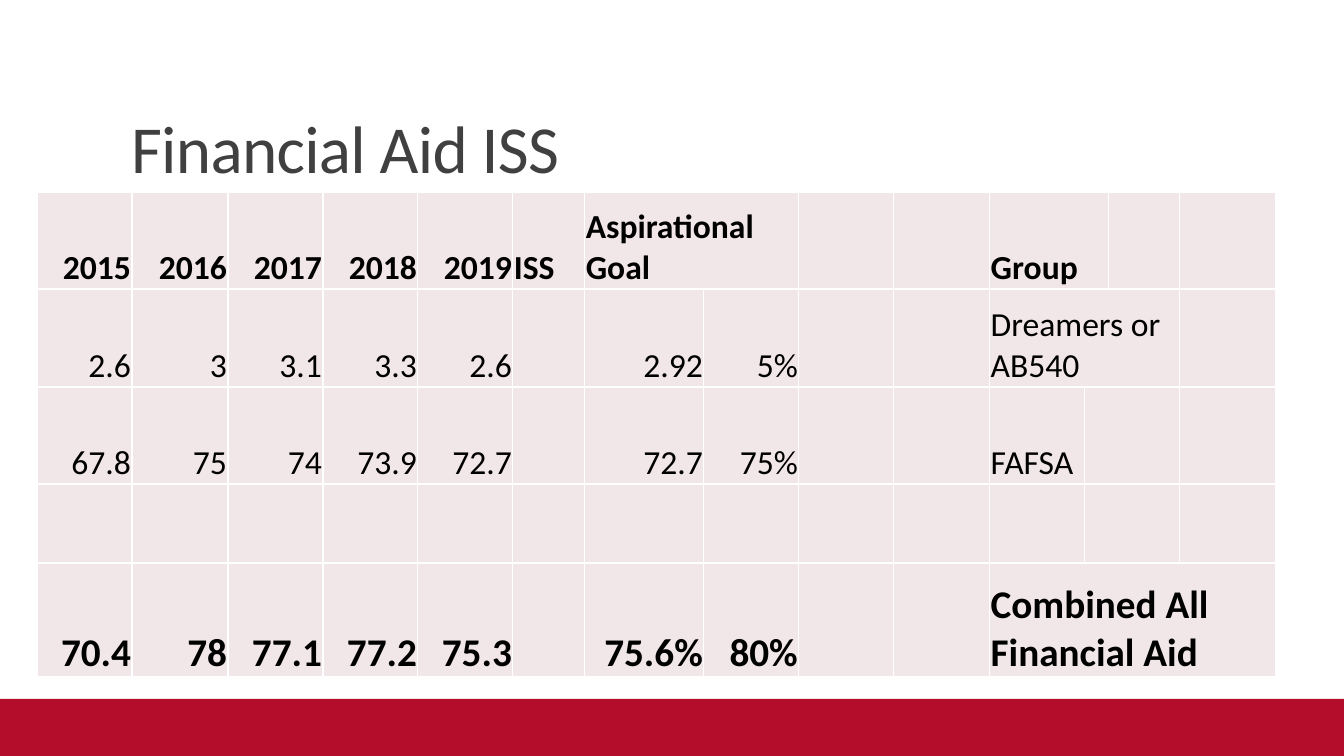
import pptx
import pptx.util
import pptx.dml.color
import pptx.enum.shapes
import pptx.enum.text
import lxml.etree

SCALE = 12192000 / 1344
COLORS = {"red": "B40D2B", "cell": "F2E7E8", "rule": "FFFFFF", "title": "404040", "text": "000000"}
ALIGN = pptx.enum.text.PP_ALIGN
ANCHOR = pptx.enum.text.MSO_ANCHOR
NS = "http://schemas.openxmlformats.org/drawingml/2006/main"

EDGES = [0, 95, 191, 286, 381, 476, 548, 667, 762, 857, 953, 1048, 1072, 1143, 1239]
ROWS = [97, 98, 97, 79, 114]
DATA = [
    {0: "2015", 1: "2016", 2: "2017", 3: "2018", 4: "2019", 5: "ISS", 6: "Aspirational Goal", 10: "Group"},
    {0: "2.6", 1: "3", 2: "3.1", 3: "3.3", 4: "2.6", 6: "2.92", 7: "5%", 10: "Dreamers or AB540"},
    {0: "67.8", 1: "75", 2: "74", 3: "73.9", 4: "72.7", 6: "72.7", 7: "75%", 10: "FAFSA"},
    {},
    {0: "70.4", 1: "78", 2: "77.1", 3: "77.2", 4: "75.3", 6: "75.6%", 7: "80%", 10: "Combined All Financial Aid"},
]
SPANS = [(0, 6, 7), (0, 10, 11), (1, 10, 12), (2, 11, 12), (3, 11, 12), (4, 10, 13)]


def px(n):
    """Turn pixels into EMU."""
    return pptx.util.Emu(round(n * SCALE))


def rgb(name):
    """Look up a named colour."""
    return pptx.dml.color.RGBColor.from_string(COLORS[name])


def write(frame, text, size=24, color="text", bold=False, align=ALIGN.LEFT, line=None, track=None):
    """Put one formatted paragraph into a text frame."""
    para = frame.paragraphs[0]
    para.alignment = align
    if line:
        para.line_spacing = line
    run = para.add_run()
    run.text = text
    font = run.font
    font.name, font.size, font.bold = "Calibri", pptx.util.Pt(size), bold
    font.color.rgb = rgb(color)
    if track:
        font._element.set("spc", str(track))


def head(slide, x, y, w, h):
    """Place and fill the title."""
    title = slide.shapes.title
    title.left, title.top, title.width, title.height = px(x), px(y), px(w), px(h)
    frame = title.text_frame
    frame.auto_size = pptx.enum.text.MSO_AUTO_SIZE.NONE
    frame.vertical_anchor = ANCHOR.BOTTOM
    write(frame, "Financial Aid ISS", size=48, color="title", line=0.85, track=-50)


def foot(slide, x, y, w, h):
    """Draw the thin strip and the band below it."""
    strip = 7
    for top, tall in ((y + strip, h - strip), (y, strip)):
        bar = slide.shapes.add_shape(
            pptx.enum.shapes.MSO_SHAPE.RECTANGLE, px(x), px(top), px(w), px(tall))
        bar.shadow.inherit = False
        bar.fill.solid()
        bar.fill.fore_color.rgb = rgb("red")
        bar.line.fill.background()


def paint(cell):
    """Give a cell its borders and fill."""
    props = cell._tc.get_or_add_tcPr()
    for side in "LRTB":
        line = lxml.etree.SubElement(props, f"{{{NS}}}ln{side}", w="12700")
        fill = lxml.etree.SubElement(line, f"{{{NS}}}solidFill")
        lxml.etree.SubElement(fill, f"{{{NS}}}srgbClr", val=COLORS["rule"])
    cell.fill.solid()
    cell.fill.fore_color.rgb = rgb("cell")


def grid(slide, x, y):
    """Build the table of yearly figures."""
    cols = len(EDGES) - 1
    table = slide.shapes.add_table(
        len(ROWS), cols, px(x), px(y), px(EDGES[-1]), px(sum(ROWS))).table
    table.first_row = table.horz_banding = False
    for col, left, right in zip(table.columns, EDGES, EDGES[1:]):
        col.width = px(right - left)
    for row, tall in zip(table.rows, ROWS):
        row.height = px(tall)
    for row, first, last in SPANS:
        table.cell(row, first).merge(table.cell(row, last))
    for r, texts in enumerate(DATA):
        for c in range(cols):
            cell = table.cell(r, c)
            paint(cell)
            if c not in texts:
                continue
            cell.margin_left = cell.margin_right = cell.margin_top = px(1)
            cell.margin_bottom = 0
            cell.vertical_anchor = ANCHOR.BOTTOM
            number = texts[c][0].isdigit()
            write(cell.text_frame, texts[c], size=28 if r == 4 else 24,
                  bold=r in (0, 4), align=ALIGN.RIGHT if number else ALIGN.LEFT)


def main():
    """Build and save the slide."""
    deck = pptx.Presentation()
    deck.slide_width, deck.slide_height = px(1344), px(756)
    slide = deck.slides.add_slide(deck.slide_layouts[5])
    foot(slide, 0, 699, 1344, 57)
    head(slide, 121, 31, 1109, 161)
    grid(slide, 37, 192)
    deck.save("out.pptx")


if __name__ == "__main__":
    main()
